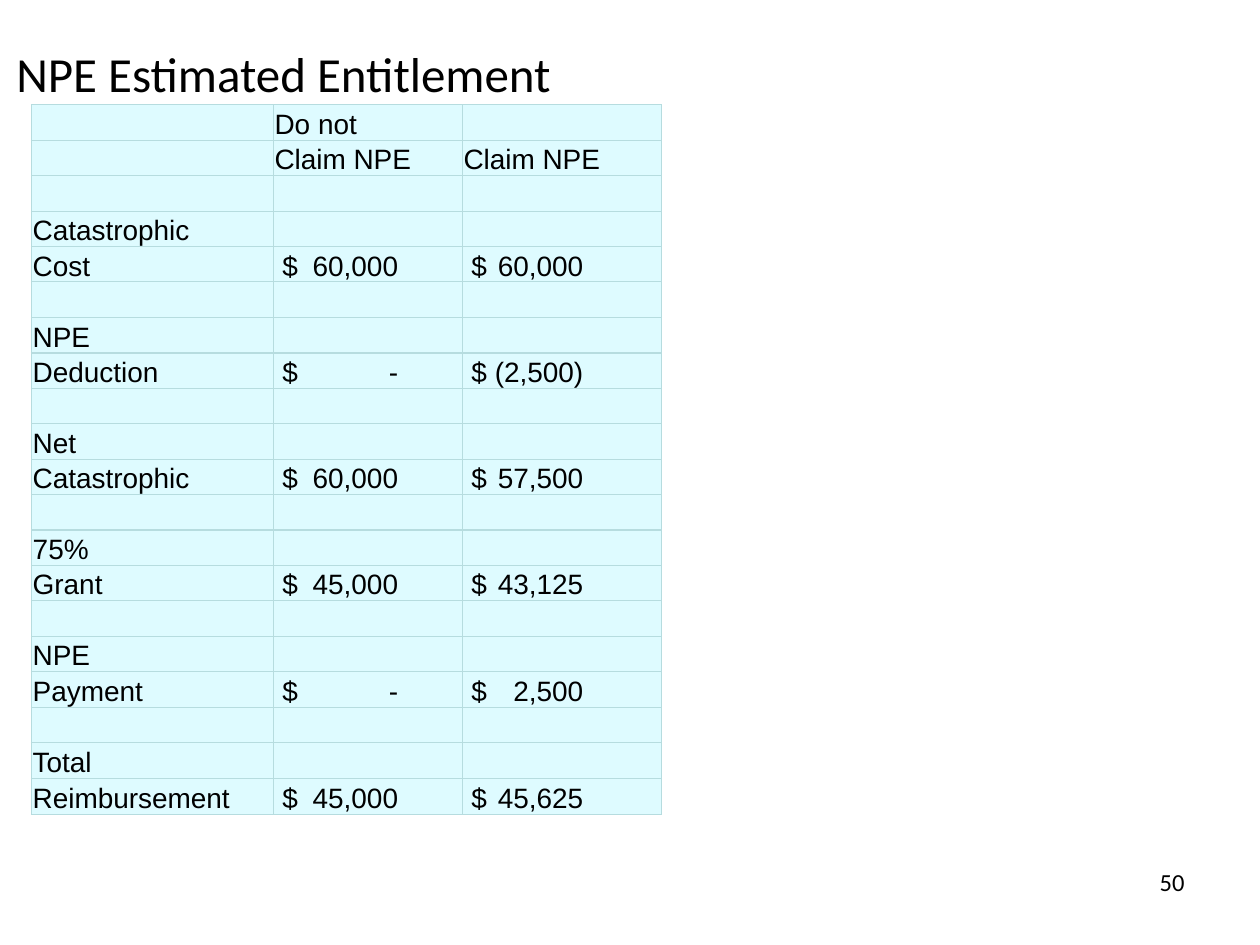
from lxml import etree
from pptx import Presentation
from pptx.dml.color import RGBColor
from pptx.enum.shapes import MSO_SHAPE
from pptx.enum.text import MSO_ANCHOR, PP_ALIGN
from pptx.oxml.ns import qn
from pptx.util import Inches, Pt

RECTANGLE = MSO_SHAPE.RECTANGLE
MIDDLE, BOTTOM, TOP = MSO_ANCHOR.MIDDLE, MSO_ANCHOR.BOTTOM, MSO_ANCHOR.TOP
LEFT, RIGHT = PP_ALIGN.LEFT, PP_ALIGN.RIGHT
TITLE_ONLY = 5

COLUMN_WIDTHS = [1.92, 1.5, 1.58]
AMOUNT_STOPS = [None, 0.98, 0.95]  # right edge of the amounts in each column
ROW_HEIGHT, LAST_ROW_HEIGHT = 0.28, 0.29

# Each group: first line, second line, amounts under the two choices
HEADER = [["", "Do not", ""], ["", "Claim NPE", "Claim NPE"]]
GROUPS = [
    ("Catastrophic", "Cost", "60,000", "60,000"),
    ("NPE", "Deduction", "-", "(2,500)"),
    ("Net", "Catastrophic", "60,000", "57,500"),
    ("75%", "Grant", "45,000", "43,125"),
    ("NPE", "Payment", "-", "2,500"),
    ("Total", "Reimbursement", "45,000", "45,625"),
]


def color(value):
    return RGBColor.from_string(value)


def set_values(target, values):
    for name, value in values.items():
        setattr(target, name, value)


class SlideBuilder:
    title_font = {"name": "Calibri", "size": Pt(28)}
    number_font = {"name": "Calibri", "size": Pt(14)}
    table_font = {"name": "Arial", "size": Pt(16)}
    text_color, paper = "000000", "FFFFFF"
    cell_fill, border_color, border_width = "DEFBFF", "B6DCDF", Pt(0.75)
    cell_format = {"margin_left": Inches(0.01), "margin_right": Inches(0.01),
                   "margin_top": Inches(0.01), "margin_bottom": 0,
                   "vertical_anchor": BOTTOM}

    def __init__(self, presentation):
        self.slide = presentation.slides.add_slide(presentation.slide_layouts[TITLE_ONLY])

    def add_text(self, paragraph, text, font, alignment=LEFT):
        paragraph.alignment = alignment
        run = paragraph.add_run()
        run.text = text
        set_values(run.font, font)
        run.font.color.rgb = color(self.text_color)

    def title(self, text, left, top, width, height):
        shape = self.slide.shapes.title
        set_values(shape, {"left": Inches(left), "top": Inches(top),
                           "width": Inches(width), "height": Inches(height)})
        shape.text_frame.vertical_anchor = MIDDLE
        self.add_text(shape.text_frame.paragraphs[0], text, self.title_font)

    def page_number(self, text, left, top, width, height):
        shape = self.slide.shapes.add_shape(
            RECTANGLE, Inches(left), Inches(top), Inches(width), Inches(height))
        shape.shadow.inherit = False
        shape.fill.solid()
        shape.fill.fore_color.rgb = color(self.paper)
        shape.line.fill.background()
        set_values(shape.text_frame, {"word_wrap": False, "vertical_anchor": TOP})
        self.add_text(shape.text_frame.paragraphs[0], text, self.number_font, RIGHT)

    def border(self, cell):
        properties = cell._tc.get_or_add_tcPr()
        for position, side in enumerate(("a:lnL", "a:lnR", "a:lnT", "a:lnB")):
            line = etree.Element(qn(side), w=str(self.border_width))
            fill = etree.SubElement(line, qn("a:solidFill"))
            etree.SubElement(fill, qn("a:srgbClr"), val=self.border_color)
            properties.insert(position, line)

    def cell(self, cell, text, stop):
        set_values(cell, self.cell_format)
        cell.fill.solid()
        cell.fill.fore_color.rgb = color(self.cell_fill)
        self.border(cell)
        paragraph = cell.text_frame.paragraphs[0]
        if not text:
            # An empty cell keeps the text size so that its row stays low
            size = str(int(self.table_font["size"].pt * 100))
            etree.SubElement(paragraph._p, qn("a:endParaRPr"), sz=size)
            return
        if "\t" in text:
            stops = etree.SubElement(paragraph._p.get_or_add_pPr(), qn("a:tabLst"))
            etree.SubElement(stops, qn("a:tab"), pos=str(Inches(stop)), algn="r")
        self.add_text(paragraph, text, self.table_font)

    def table(self, rows, left, top):
        height = ROW_HEIGHT * (len(rows) - 1) + LAST_ROW_HEIGHT
        table = self.slide.shapes.add_table(
            len(rows), len(COLUMN_WIDTHS), Inches(left), Inches(top),
            Inches(sum(COLUMN_WIDTHS)), Inches(height)).table
        set_values(table, {"first_row": False, "horz_banding": False})
        for column, width in zip(table.columns, COLUMN_WIDTHS):
            column.width = Inches(width)
        for row, texts in zip(table.rows, rows):
            row.height = Inches(ROW_HEIGHT)
            for cell, text, stop in zip(row.cells, texts, AMOUNT_STOPS):
                self.cell(cell, text, stop)
        table.rows[len(rows) - 1].height = Inches(LAST_ROW_HEIGHT)


def entitlement_rows():
    rows = list(HEADER)
    for first, second, *amounts in GROUPS:
        rows += [["", "", ""], [first, "", ""],
                 [second] + [f" $\t{amount}" for amount in amounts]]
    return rows


def main():
    presentation = Presentation()
    set_values(presentation, {"slide_width": Inches(10), "slide_height": Inches(7.5)})
    builder = SlideBuilder(presentation)
    builder.title("NPE Estimated Entitlement", 0.03, 0.08, 6.92, 1)
    builder.table(entitlement_rows(), 0.25, 0.83)
    builder.page_number("50", 9.08, 6.83, 0.42, 0.34)
    presentation.save("out.pptx")


if __name__ == "__main__":
    main()
